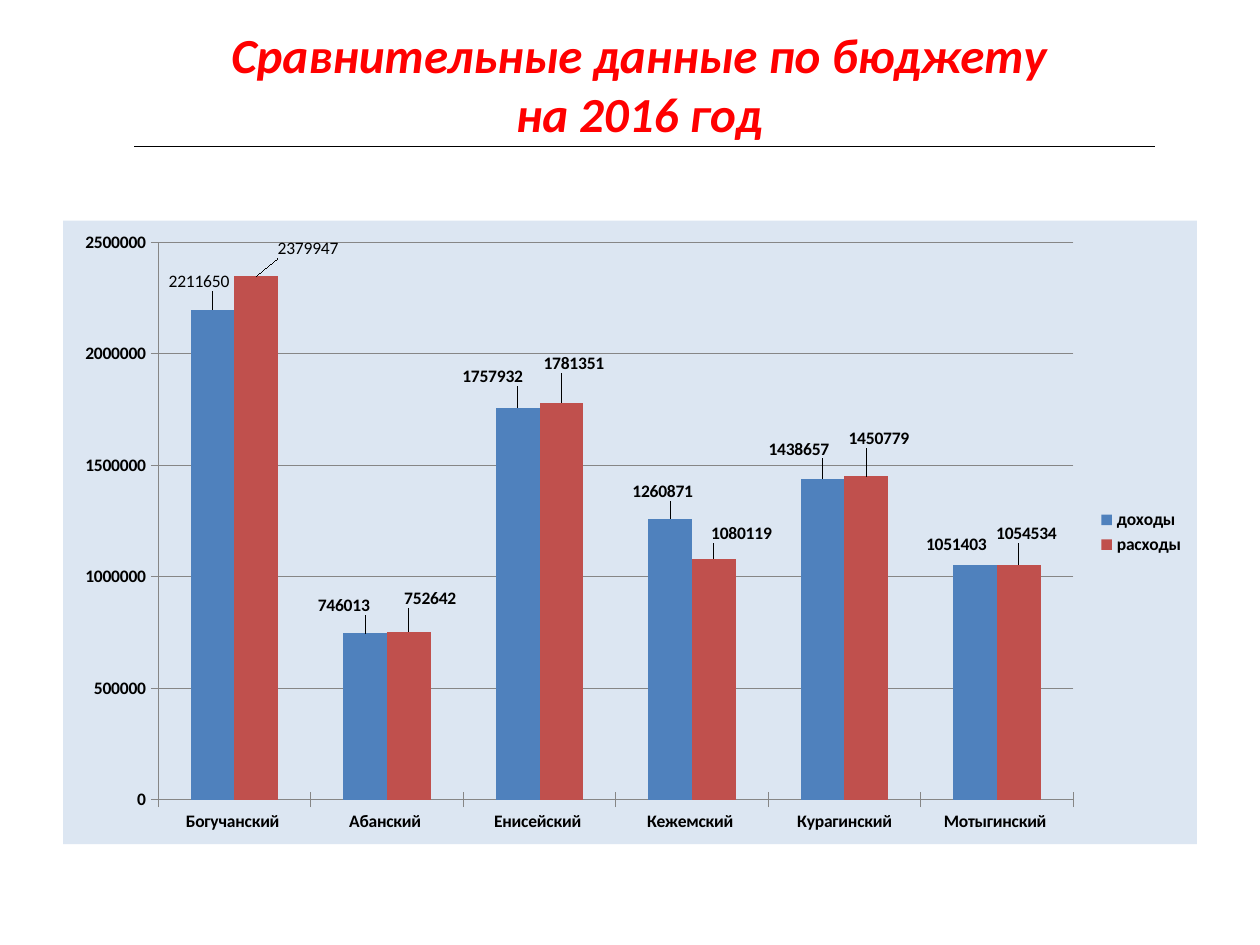
from pptx import Presentation
from pptx.chart.data import CategoryChartData as ChartData
from pptx.dml.color import RGBColor as RGB
from pptx.enum.chart import XL_CHART_TYPE as Kind, XL_LABEL_POSITION as Spot
from pptx.enum.chart import XL_LEGEND_POSITION as Side, XL_TICK_MARK as Tick
from pptx.enum.text import MSO_ANCHOR as Anchor, PP_ALIGN as Align
from pptx.oxml import parse_xml
from pptx.oxml.ns import nsdecls, qn
from pptx.util import Inches, Pt


class Theme:
    font = "Calibri"
    title, text, grid = (RGB.from_string(c) for c in ("FF0000", "000000", "868686"))
    panel = "DCE6F2"
    big, small = Pt(28), Pt(10)


TITLE = ["Сравнительные данные по бюджету ", "на 2016 год "]
WIDE, HIGH = 9, 4.95  # chart size in inches
CATS = ["Богучанский ", "Абанский ", "Енисейский ", "Кежемский ",
        "Курагинский", "Мотыгинский "]
# name, colour, values, text of first label, label shifts in inches
SERIES = [
    ("доходы", "4F81BD", [2197245, 746013, 1757932, 1260871, 1438657, 1051403], "2211650",
     [(-.11, -.11), (-.17, -.1), (-.2, -.13), (-.06, -.1), (-.19, -.12), (-.15, -.05)]),
    ("расходы", "C0504D", [2348078, 752642, 1781351, 1080119, 1450779, 1054534], "2379947",
     [(.41, -.1), (.17, -.15), (.1, -.19), (.22, -.08), (.1, -.18), (.06, -.13)]),
]


def style(font, color=Theme.text, **extra):
    looks = {"name": Theme.font, "size": Theme.small, "bold": True, **extra}
    for key, val in looks.items():
        setattr(font, key, val)
    font.color.rgb = color


def layout(inner=False, **parts):
    target = '<c:layoutTarget val="inner"/>' if inner else ""
    modes = '<c:xMode val="edge"/><c:yMode val="edge"/>' if inner else ""
    sizes = "".join(f'<c:{key} val="{val:.4f}"/>' for key, val in parts.items())
    return parse_xml(f'<c:layout {nsdecls("c")}><c:manualLayout>{target}{modes}{sizes}'
                     '</c:manualLayout></c:layout>')


def add_title(slide):
    frame = slide.shapes.add_table(1, 1, Inches(1.06), Inches(0.21),
                                   Inches(8.11), Inches(0.94))
    table = frame.table
    for key in ("first_row", "horz_banding"):
        setattr(table, key, False)
    cell = table.cell(0, 0)
    for side in ("left", "right", "top", "bottom"):
        setattr(cell, f"margin_{side}", 0)
    cell.vertical_anchor = Anchor.BOTTOM
    cell.fill.background()
    for i, line in enumerate(TITLE):
        box = cell.text_frame
        para = box.paragraphs[0] if i == 0 else box.add_paragraph()
        para.alignment = Align.CENTER
        run = para.add_run()
        run.text = line
        style(run.font, Theme.title, size=Theme.big, italic=True)
    # Rule under the title
    cell.fill._xPr.insert(0, parse_xml(
        f'<a:lnB {nsdecls("a")} w="{Pt(0.5)}"><a:solidFill>'
        f'<a:srgbClr val="{Theme.text}"/></a:solidFill></a:lnB>'))


def add_labels(bars, first, shifts):
    style(bars.data_labels.font)
    bars.data_labels.show_value = True
    for i, (dx, dy) in enumerate(shifts):
        label = bars.points[i].data_label
        if i == 0:
            run = label.text_frame.paragraphs[0].add_run()
            run.text = first
            style(run.font, bold=False)
        else:
            style(label.font)
        label.position = Spot.OUTSIDE_END
        node = bars.data_labels._element.findall(qn("c:dLbl"))[i]
        node.find(qn("c:idx")).addnext(layout(x=dx / WIDE, y=dy / HIGH))


def add_bars(slide):
    data = ChartData()
    data.categories = CATS
    for name, _, vals, *_ in SERIES:
        data.add_series(name, vals)
    chart = slide.shapes.add_chart(Kind.COLUMN_CLUSTERED, Inches(0.5), Inches(1.75),
                                   Inches(WIDE), Inches(HIGH), data).chart
    style(chart.font, bold=False)
    chart.has_title = False

    # Panel behind the chart and place of the plot
    root = chart.element
    root.find(qn("c:txPr")).addprevious(parse_xml(
        f'<c:spPr {nsdecls("c", "a")}><a:solidFill><a:srgbClr val="{Theme.panel}"/>'
        '</a:solidFill><a:ln><a:noFill/></a:ln></c:spPr>'))
    area = root.find(".//" + qn("c:plotArea"))
    for old in area.findall(qn("c:layout")):
        area.remove(old)
    area.insert(0, layout(True, x=.084, y=.035, w=.807, h=.894))

    # Axes
    for axis in (chart.category_axis, chart.value_axis):
        style(axis.tick_labels.font)
        axis.major_tick_mark = Tick.CROSS
        axis.format.line.color.rgb = Theme.grid
    axis = chart.value_axis
    for key, val in {"minimum_scale": 0, "maximum_scale": 2500000,
                     "major_unit": 500000}.items():
        setattr(axis, key, val)
    axis.major_gridlines.format.line.color.rgb = Theme.grid

    # Legend
    chart.has_legend = True
    chart.legend.position = Side.RIGHT
    chart.legend.include_in_layout = False
    style(chart.legend.font)

    # Bars
    plot = chart.plots[0]
    for key, val in {"gap_width": 150, "overlap": 0, "vary_by_categories": False}.items():
        setattr(plot, key, val)
    for bars, (_, color, _, first, shifts) in zip(plot.series, SERIES):
        bars.format.fill.solid()
        bars.format.fill.fore_color.rgb = RGB.from_string(color)
        add_labels(bars, first, shifts)


def main():
    deck = Presentation()
    deck.slide_width, deck.slide_height = Inches(10), Inches(7.5)
    slide = deck.slides.add_slide(deck.slide_layouts[6])
    add_title(slide)
    add_bars(slide)
    deck.save("out.pptx")


if __name__ == "__main__":
    main()
